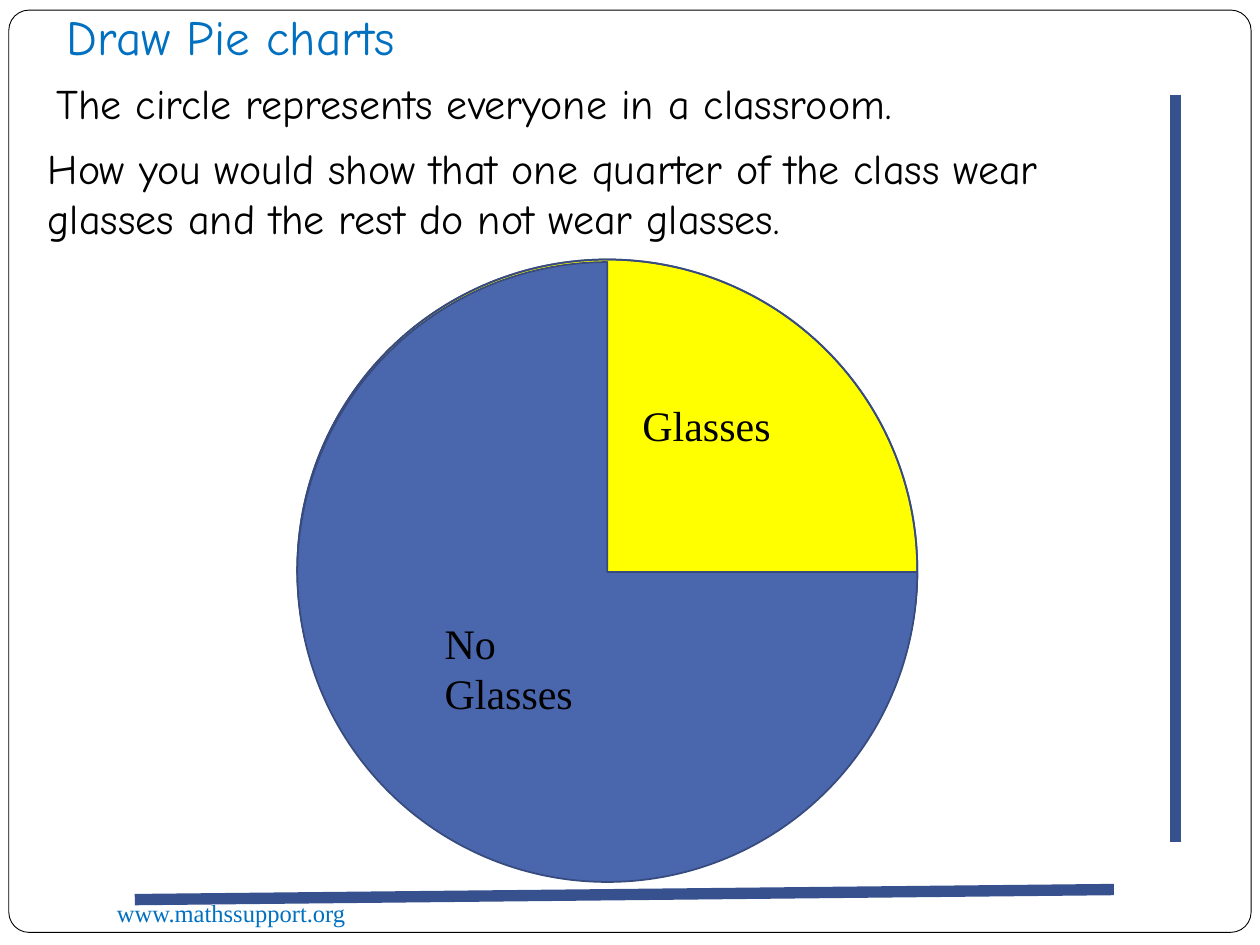
import pptx
import pptx.util
import pptx.dml.color
import pptx.enum.shapes
import pptx.enum.text
import pptx.oxml

Inches = pptx.util.Inches
Pt = pptx.util.Pt
Shape = pptx.enum.shapes.MSO_SHAPE

COLOURS = {
    "paper": "FFFFFF",
    "ink": "000000",
    "heading": "0070C0",
    "glasses": "FFFF00",
    "no_glasses": "4A66AC",
    "outline": "374B7F",
    "bar": "37508E",
}
HAND = "Comic Neue"
SERIF = "Times New Roman"


def rgb(name):
    """Return the named colour."""
    return pptx.dml.color.RGBColor.from_string(COLOURS[name])


def write(box, text, size, font, colour):
    """Put one left-aligned paragraph at the top of a box."""
    frame = box.text_frame
    frame.word_wrap = True
    frame.auto_size = pptx.enum.text.MSO_AUTO_SIZE.NONE
    frame.vertical_anchor = pptx.enum.text.MSO_ANCHOR.TOP
    frame.text = text
    para = frame.paragraphs[0]
    para.alignment = pptx.enum.text.PP_ALIGN.LEFT
    para.font.size = Pt(size)
    para.font.name = font
    para.font.color.rgb = rgb(colour)


def add_label(page, left, top, width, height, text, size=24, font=SERIF, colour="ink"):
    """Add a text box at a place given in inches."""
    box = page.shapes.add_textbox(Inches(left), Inches(top), Inches(width), Inches(height))
    write(box, text, size, font, colour)


def add_figure(page, kind, left, top, width, height, fill, line, weight):
    """Add an outlined preset shape, hollow when fill is None."""
    figure = page.shapes.add_shape(
        kind, Inches(left), Inches(top), Inches(width), Inches(height))
    figure.shadow.inherit = False
    if fill:
        figure.fill.solid()
        figure.fill.fore_color.rgb = rgb(fill)
    else:
        figure.fill.background()
    figure.line.color.rgb = rgb(line)
    figure.line.width = Pt(weight)
    return figure


def add_bar(page, start, end):
    """Add a thick straight line between two points."""
    bar = page.shapes.add_connector(
        pptx.enum.shapes.MSO_CONNECTOR.STRAIGHT, *map(Inches, start + end))
    bar.line.color.rgb = rgb("bar")
    bar.line.width = Pt(6.5)
    bar.element.spPr.append(pptx.oxml.parse_xml(
        '<a:effectLst xmlns:a="http://schemas.openxmlformats.org/drawingml/2006/main"/>'))


def add_frame(page, left, top, width, height):
    """Add the rounded page frame with its web address and accent bars."""
    frame = add_figure(page, Shape.ROUNDED_RECTANGLE, left, top, width, height,
                       "paper", "ink", 0.5)
    frame.adjustments[0] = 0.022
    page.shapes.element.insert(2, frame.element)
    add_label(page, left + 0.76, top + 7, 3.25, 0.34,
              "www.mathssupport.org", 14, SERIF, "heading")
    add_bar(page, (left + 8.77, top + 6.98), (left + 1, top + 7.06))
    add_bar(page, (left + 9.26, top + 0.67), (left + 9.26, top + 6.6))


def add_question(page, left, top):
    """Place the title and the two statements below it."""
    title = page.shapes.title
    title.left, title.top = Inches(left + 0.15), Inches(top)
    title.width, title.height = Inches(9.29), Inches(0.57)
    write(title, "Draw Pie charts", 28, HAND, "heading")
    add_label(page, left + 0.07, top + 0.57, 7.48, 0.5,
              "The circle represents everyone in a classroom.", font=HAND)
    add_label(page, left, top + 1.08, 8.82, 0.91,
              "How you would show that one quarter of the class wear glasses "
              "and the rest do not wear glasses.", font=HAND)


def add_class_circle(page, left, top, size):
    """Draw the class as a circle with a three-quarter sector over it."""
    for kind, drop, fill in (
        (Shape.OVAL, 0, "glasses"),
        (Shape.OVAL, 0, None),
        (Shape.PIE, 0.02, "no_glasses"),
    ):
        add_figure(page, kind, left, top + drop, size, size, fill, "outline", 1)
    add_label(page, left + 1.07, top + 2.79, 1.42, 0.91, "No Glasses")
    add_label(page, left + 2.64, top + 1.06, 1.42, 0.5, "Glasses")


def main():
    """Build and save the slide."""
    deck = pptx.Presentation()
    deck.slide_width, deck.slide_height = Inches(10), Inches(7.5)
    page = deck.slides.add_slide(deck.slide_layouts[5])
    add_frame(page, 0.07, 0.08, 9.86, 7.32)
    add_question(page, 0.28, 0)
    add_class_circle(page, 2.36, 2.06, 4.92)
    deck.save("out.pptx")


if __name__ == "__main__":
    main()
